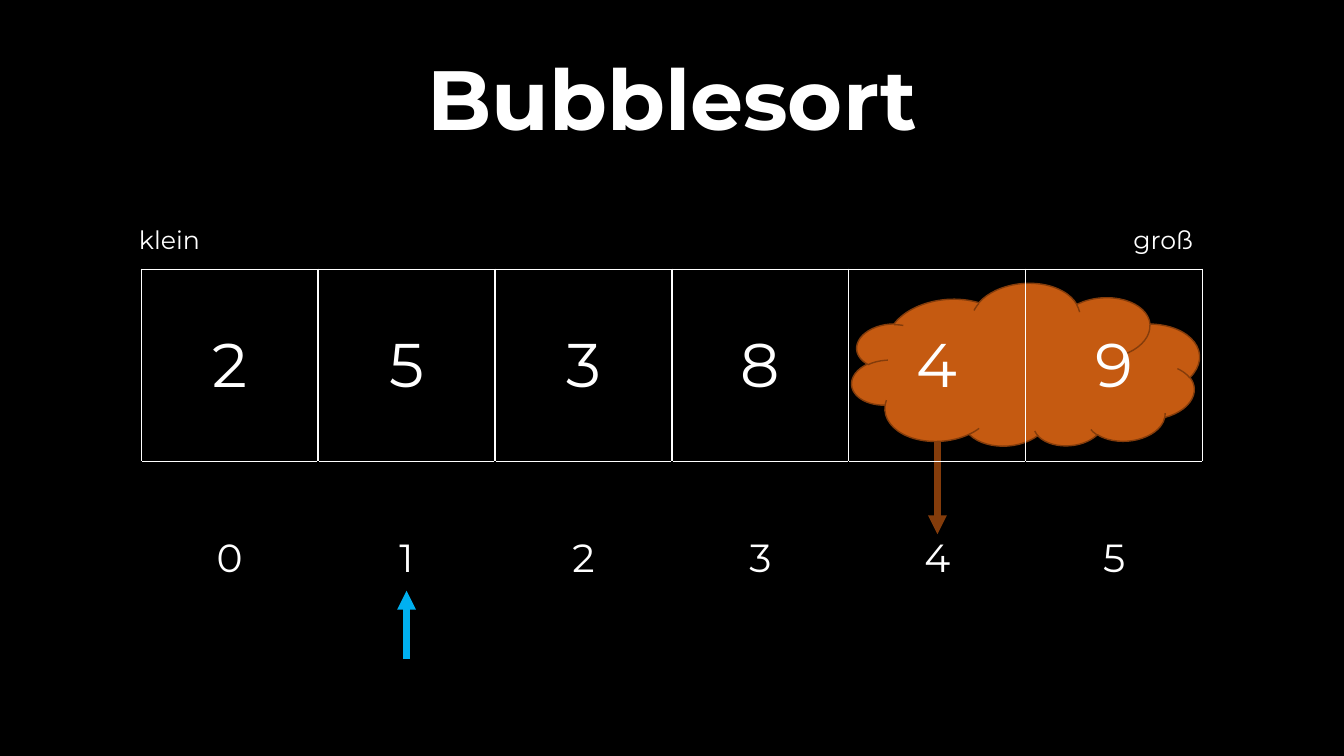
from lxml import etree
from pptx import Presentation
from pptx.dml.color import RGBColor
from pptx.enum.shapes import MSO_CONNECTOR, MSO_SHAPE
from pptx.enum.text import MSO_ANCHOR, PP_ALIGN
from pptx.oxml.ns import qn
from pptx.util import Inches, Pt

LEFT, CENTER, RIGHT = PP_ALIGN.LEFT, PP_ALIGN.CENTER, PP_ALIGN.RIGHT
MIDDLE = MSO_ANCHOR.MIDDLE
STRAIGHT, CLOUD = MSO_CONNECTOR.STRAIGHT, MSO_SHAPE.CLOUD

# Content
TITLE = "Bubblesort"
VALUES = [2, 5, 3, 8, 4, 9]
LABELS = [("klein", 1.28, LEFT), ("groß", 10.42, RIGHT)]
BUBBLE, MARK = 4, 1  # columns the two arrows point at

# Look
FONT = "Montserrat"
COLORS = {"back": "000000", "text": "FFFFFF", "cloud": "C55A11",
          "edge": "843C0B", "mark": "00B0F0"}
SIZES = {"title": 60, "value": 44, "index": 28, "label": 18}

# Grid
X, Y = 1.4, 2.67
COL, ROW = 1.755, 1.91
COUNT = len(VALUES)


def color(name):
    return RGBColor.from_string(COLORS[name])


def write(frame, text, size, align, bold=False):
    para = frame.paragraphs[0]
    para.alignment = align
    run = para.add_run()
    run.text = str(text)
    look = {"name": FONT, "size": Pt(SIZES[size]), "bold": bold}
    for key, val in look.items():
        setattr(run.font, key, val)
    run.font.color.rgb = color("text")
    return para


def arrow(col, start, end, name):
    x = Inches(X + (col + 0.5) * COL)
    line = slide.shapes.add_connector(STRAIGHT, x, Inches(start), x, Inches(end))
    line.line.color.rgb = color(name)
    line.line.width = Pt(4.5)
    etree.SubElement(line.line._get_or_add_ln(), qn("a:tailEnd"), type="triangle")
    etree.SubElement(line._element.spPr, qn("a:effectLst"))


def border(cell, sides):
    props = cell._tc.get_or_add_tcPr()
    for pos, (side, name) in enumerate(sides.items()):
        ln = etree.Element(qn(f"a:ln{side}"), w=str(Pt(1)))
        fill = etree.SubElement(ln, qn("a:solidFill"))
        etree.SubElement(fill, qn("a:srgbClr"), val=COLORS[name])
        props.insert(pos, ln)


# Slide
prs = Presentation()
prs.slide_width, prs.slide_height = Inches(13.33), Inches(7.5)
slide = prs.slides.add_slide(prs.slide_layouts[5])
slide.background.fill.solid()
slide.background.fill.fore_color.rgb = color("back")

# Title
title = slide.shapes.title
spot = {"left": 0.15, "top": 0.31, "width": 13.03, "height": 1.42}
for key, val in spot.items():
    setattr(title, key, Inches(val))
title.text_frame.vertical_anchor = MIDDLE
para = write(title.text_frame, TITLE, "title", CENTER, True)
para.line_spacing = 0.9
para.space_before = Pt(10)

# Bubble with its arrow, behind the table
arrow(BUBBLE, 3.92, 5.3, "edge")
cloud = slide.shapes.add_shape(CLOUD, Inches(8.44), Inches(2.82),
                               Inches(3.46), Inches(1.64))
cloud.shadow.inherit = False
cloud.rotation = 355.5
cloud._element.spPr.xfrm.set("flipV", "1")
cloud.fill.solid()
cloud.fill.fore_color.rgb = color("cloud")
cloud.line.color.rgb = color("edge")
cloud.line.width = Pt(1)

# Table: values above, indices below
table = slide.shapes.add_table(2, COUNT, Inches(X), Inches(Y),
                               Inches(COUNT * COL), Inches(2 * ROW)).table
table.first_row = table.horz_banding = False
for col in table.columns:
    col.width = Inches(COL)
rows = [(VALUES, "value", dict.fromkeys("LRTB", "text")),
        (range(COUNT), "index", dict.fromkeys("LRTB", "back") | {"T": "text"})]
for r, (items, size, sides) in enumerate(rows):
    table.rows[r].height = Inches(ROW)
    for c, item in enumerate(items):
        cell = table.cell(r, c)
        cell.fill.background()
        cell.vertical_anchor = MIDDLE
        write(cell.text_frame, item, size, CENTER)
        border(cell, sides)

# Labels at both ends
for text, left, align in LABELS:
    box = slide.shapes.add_textbox(Inches(left), Inches(2.18),
                                   Inches(1.51), Inches(0.4))
    box.text_frame.word_wrap = True
    write(box.text_frame, text, "label", align)

# Pointer to the current index
arrow(MARK, 6.54, 5.86, "mark")

prs.save("out.pptx")
